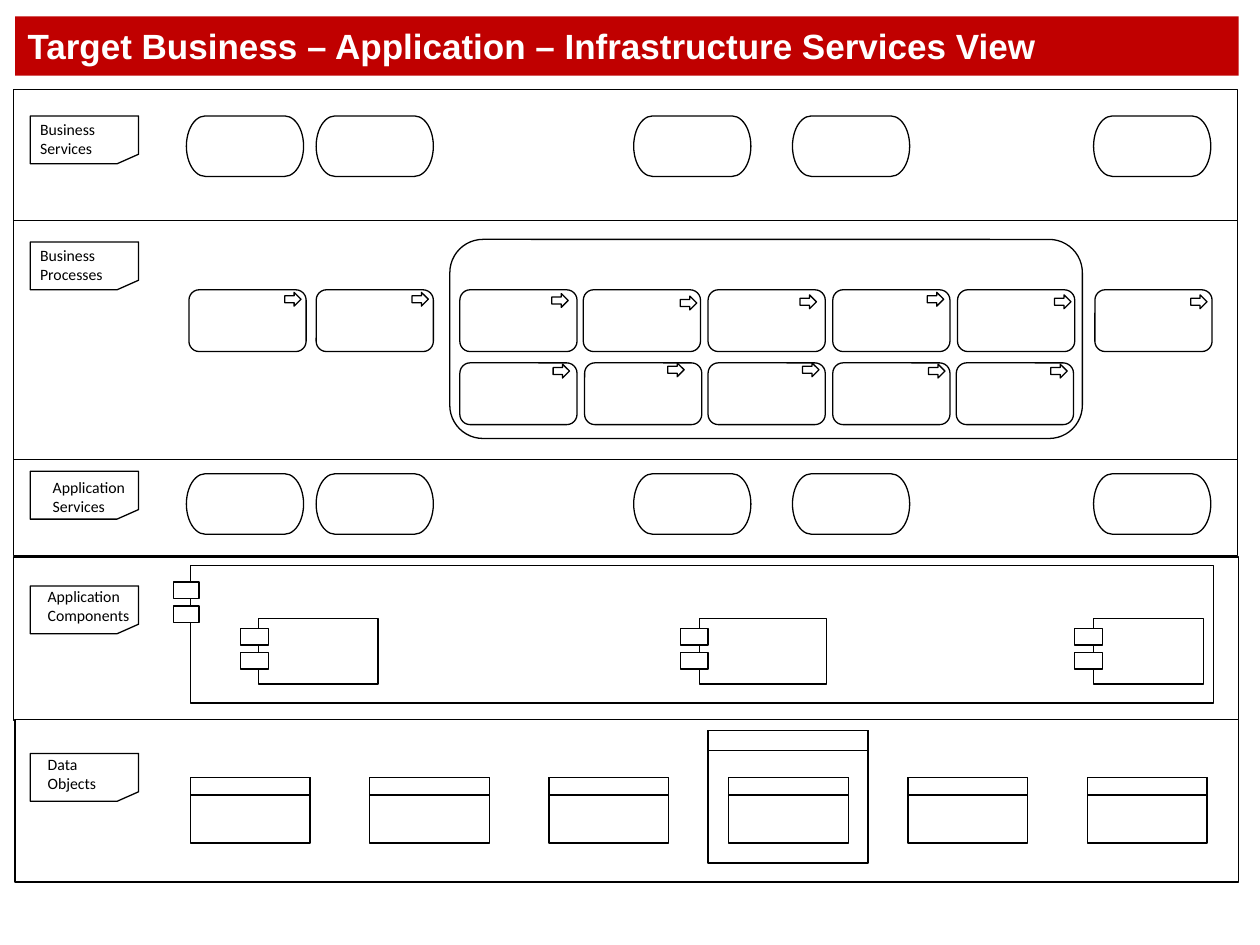
import pptx
import pptx.util
import pptx.dml.color
import pptx.enum.shapes
import pptx.enum.text
from pptx.util import Inches

SHAPE = pptx.enum.shapes.MSO_SHAPE
ANCHOR = pptx.enum.text.MSO_ANCHOR
FIT = pptx.enum.text.MSO_AUTO_SIZE
ALIGN = pptx.enum.text.PP_ALIGN


class Theme:
    red = pptx.dml.color.RGBColor(0xC0, 0x00, 0x00)
    white = pptx.dml.color.RGBColor(0xFF, 0xFF, 0xFF)
    black = pptx.dml.color.RGBColor(0x00, 0x00, 0x00)
    title_font, title_size = "Arial", pptx.util.Pt(20)
    label_font, label_size = "Calibri", pptx.util.Pt(9)
    line_width = pptx.util.Pt(0.75)


TITLE = "Target Business – Application – Infrastructure Services View"

# Left, top, width, height; from back to front
BANDS = [
    (0.11, 4.42, 9.72, 1.3),
    (0.11, 3.65, 9.71, 0.76),
    (0.11, 1.72, 9.71, 1.93),
    (0.11, 0.71, 9.71, 1.04),
    (0.12, 5.71, 9.71, 1.29),
]

# Text, card top, then left, top and width of the text, and whether it wraps
LABELS = [
    ("Business\nServices", 0.92, 0.22, 0.9, 0.64, False),
    ("Business\nProcesses", 1.92, 0.22, 1.9, 0.7, False),
    ("Application\nServices", 3.74, 0.32, 3.74, 0.79, False),
    ("Application\nComponents", 4.65, 0.28, 4.61, 0.86, False),
    ("Data\nObjects", 5.98, 0.28, 5.94, 0.91, True),
]

SERVICE_LEFTS = [1.48, 2.51, 5.03, 6.29, 8.68]
SERVICE_TOPS = [0.92, 3.76]

# Process left, arrow left and arrow top, by top of the row
PROCESS_ROWS = {
    2.3: [
        (1.5, 2.26, 2.32), (2.51, 3.27, 2.32), (3.65, 4.38, 2.33),
        (4.63, 5.4, 2.35), (5.62, 6.35, 2.34), (6.61, 7.36, 2.32),
        (7.6, 8.37, 2.34), (8.69, 9.45, 2.34),
    ],
    2.88: [
        (3.65, 4.39, 2.89), (4.64, 5.3, 2.88), (5.62, 6.37, 2.88),
        (6.61, 7.37, 2.89), (7.59, 8.34, 2.89),
    ],
}
PROCESS_GROUP = (3.57, 1.9, 5.02, 1.58)

# Body left, top, width, height; then port left, width and two tops
COMPONENTS = [
    ((1.51, 4.49, 8.12, 1.09), 1.38, 0.2, (4.62, 4.81)),
    ((2.05, 4.91, 0.95, 0.52), 1.91, 0.22, (4.99, 5.18)),
    ((5.55, 4.91, 1.01, 0.52), 5.4, 0.22, (4.99, 5.18)),
    ((8.68, 4.91, 0.87, 0.52), 8.53, 0.22, (4.99, 5.18)),
]

DATA_COUNT, DATA_LEFT, DATA_STEP = 6, 1.51, 1.424
DATA_CONTAINER = (5.62, 5.8, 1.27, 1.05)


def add_outline(shapes, kind, area, fill=None, line=Theme.black):
    box = shapes.add_shape(kind, *map(Inches, area))
    box.shadow.inherit = False
    if fill is None:
        box.fill.background()
    else:
        box.fill.solid()
        box.fill.fore_color.rgb = fill
    if line is None:
        box.line.fill.background()
    else:
        box.line.color.rgb = line
        box.line.width = Theme.line_width
    return box


def set_text(box, text, font, size, color, bold=False):
    box.text_frame.text = text
    for para in box.text_frame.paragraphs:
        para.alignment = ALIGN.LEFT
        for span in para.runs:
            span.font.name, span.font.size = font, size
            span.font.color.rgb, span.font.bold = color, bold


def add_title(shapes):
    box = add_outline(shapes, SHAPE.RECTANGLE, (0.12, 0.13, 9.71, 0.47), Theme.red, None)
    set_text(box, TITLE, Theme.title_font, Theme.title_size, Theme.white, True)
    box.text_frame.word_wrap = True
    box.text_frame.vertical_anchor = ANCHOR.MIDDLE


def add_label(shapes, text, card_top, left, top, width, wraps):
    card = add_outline(shapes, SHAPE.FLOWCHART_CARD, (0.24, card_top, 0.86, 0.38), Theme.white)
    card.rotation = 180
    box = shapes.add_textbox(*map(Inches, (left, top, width, 0.4)))
    set_text(box, text, Theme.label_font, Theme.label_size, Theme.black)
    box.text_frame.word_wrap = wraps
    box.text_frame.auto_size = FIT.SHAPE_TO_FIT_TEXT


def add_process(shapes, left, top, arrow_left, arrow_top):
    group = shapes.add_group_shape().shapes
    add_outline(group, SHAPE.ROUNDED_RECTANGLE, (left, top, 0.93, 0.49))
    add_outline(group, SHAPE.RIGHT_ARROW, (arrow_left, arrow_top, 0.13, 0.11))


def add_component(shapes, body, port_left, port_width, port_tops):
    group = shapes.add_group_shape().shapes
    add_outline(group, SHAPE.RECTANGLE, body)
    for top in port_tops:
        add_outline(group, SHAPE.RECTANGLE, (port_left, top, port_width, 0.13), Theme.white)


def add_data_object(shapes, area, header_height):
    group = shapes.add_group_shape().shapes
    add_outline(group, SHAPE.RECTANGLE, area)
    add_outline(group, SHAPE.RECTANGLE, (*area[:3], header_height), Theme.white)


def main():
    deck = pptx.Presentation()
    deck.slide_width, deck.slide_height = Inches(10), Inches(7.5)
    page = deck.slides.add_slide(deck.slide_layouts[6])
    shapes = page.shapes

    add_title(shapes)
    for band in BANDS:
        add_outline(shapes, SHAPE.RECTANGLE, band, Theme.white)
    for top in SERVICE_TOPS:
        for left in SERVICE_LEFTS:
            add_outline(shapes, SHAPE.FLOWCHART_TERMINATOR, (left, top, 0.93, 0.48))
    add_outline(shapes, SHAPE.ROUNDED_RECTANGLE, PROCESS_GROUP)
    for top, processes in PROCESS_ROWS.items():
        for left, arrow_left, arrow_top in processes:
            add_process(shapes, left, top, arrow_left, arrow_top)
    for component in COMPONENTS:
        add_component(shapes, *component)
    for label in LABELS:
        add_label(shapes, *label)
    for index in range(DATA_COUNT):
        left = DATA_LEFT + index * DATA_STEP
        add_data_object(shapes, (left, 6.17, 0.95, 0.52), 0.14)
    add_data_object(shapes, DATA_CONTAINER, 0.16)

    deck.save("out.pptx")


if __name__ == "__main__":
    main()
